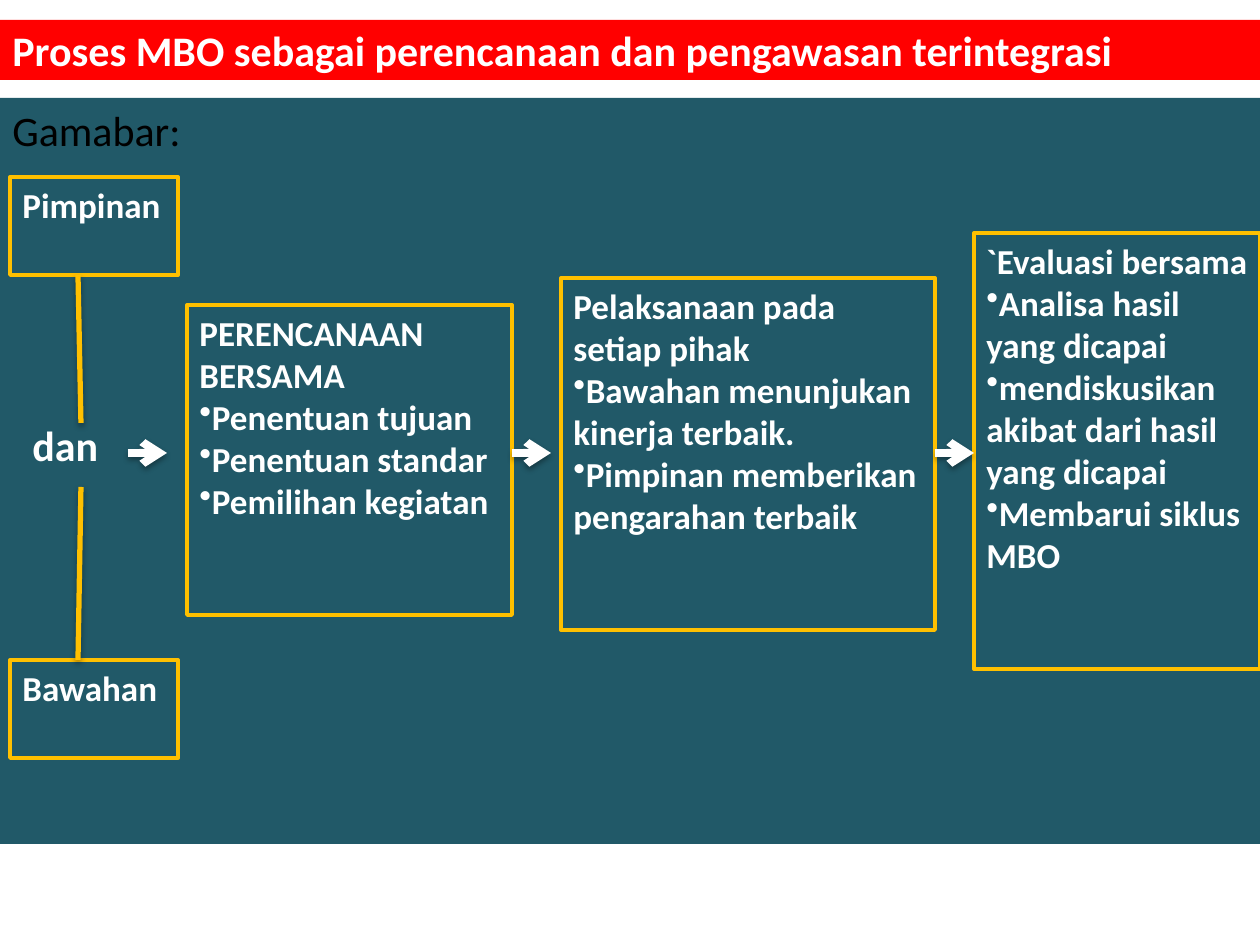
from lxml.etree import SubElement
from pptx import Presentation
from pptx.dml.color import RGBColor
from pptx.enum.shapes import MSO_CONNECTOR, MSO_SHAPE
from pptx.enum.text import MSO_ANCHOR, PP_ALIGN
from pptx.oxml.ns import qn
from pptx.util import Pt

PX = 914400 // 126
FONT = "Calibri"
COLORS = {
    "banner": "FF0000",
    "panel": "215968",
    "frame": "FFC000",
    "light": "FFFFFF",
    "dark": "000000",
}
ARROW_Y = 453
ARROW_LENGTH = 39


def rgb(name):
    return RGBColor.from_string(COLORS[name])


def px(*values):
    return [v * PX for v in values]


def add_bullet(p):
    SubElement(p._p.get_or_add_pPr(), qn("a:buChar"), char="•")


def write(s, lines, size, color="light", bold=True):
    tf = s.text_frame
    tf.text = "\n".join(lines)
    for i, p in enumerate(tf.paragraphs):
        p.alignment = PP_ALIGN.LEFT
        if i:
            add_bullet(p)
        for r in p.runs:
            r.font.name = FONT
            r.font.size = Pt(size)
            r.font.bold = bold
            r.font.color.rgb = rgb(color)
    return tf


def add_rect(slide, box):
    s = slide.shapes.add_shape(MSO_SHAPE.RECTANGLE, *px(*box))
    s.shadow.inherit = False
    s.text_frame.word_wrap = True
    s.text_frame.vertical_anchor = MSO_ANCHOR.TOP
    return s


def add_band(slide, box, fill):
    s = add_rect(slide, box)
    s.fill.solid()
    s.fill.fore_color.rgb = rgb(fill)
    s.line.fill.background()
    return s


def add_frame(slide, box, lines):
    s = add_rect(slide, box)
    s.fill.background()
    s.line.color.rgb = rgb("frame")
    s.line.width = Pt(2.25)
    write(s, lines, 20)


def add_label(slide, box, text):
    s = slide.shapes.add_textbox(*px(*box))
    s.text_frame.word_wrap = False
    write(s, [text], 24)


def add_shadow(s):
    effects = SubElement(s._element.spPr, qn("a:effectLst"))
    shadow = SubElement(effects, qn("a:outerShdw"), blurRad="40000",
                        dist="23000", dir="5400000", rotWithShape="0")
    color = SubElement(shadow, qn("a:srgbClr"), val=COLORS["dark"])
    SubElement(color, qn("a:alpha"), val="35000")


def add_line(slide, ends, color, width, arrow=False):
    s = slide.shapes.add_connector(MSO_CONNECTOR.STRAIGHT, *px(*ends))
    s.line.color.rgb = rgb(color)
    s.line.width = Pt(width)
    if arrow:
        SubElement(s.line._get_or_add_ln(), qn("a:tailEnd"), type="arrow")
    add_shadow(s)


def main():
    prs = Presentation()
    prs.slide_width, prs.slide_height = px(1260, 945)
    slide = prs.slides.add_slide(prs.slide_layouts[6])

    title = add_band(slide, (0, 20, 1260, 60), "banner")
    tf = write(title, ["Proses MBO sebagai perencanaan dan pengawasan terintegrasi"], 24)
    tf.vertical_anchor = MSO_ANCHOR.MIDDLE
    panel = add_band(slide, (0, 98, 1260, 746), "panel")
    write(panel, ["Gamabar:"], 24, "dark", False)

    for y, role in ((177, "Pimpinan"), (660, "Bawahan")):
        add_frame(slide, (10, y, 168, 98), [role])

    stages = (
        ((187, 305, 325, 310), [
            "PERENCANAAN BERSAMA",
            "Penentuan tujuan",
            "Penentuan standar",
            "Pemilihan kegiatan",
        ]),
        ((561, 278, 374, 352), [
            "Pelaksanaan pada setiap pihak",
            "Bawahan menunjukan kinerja terbaik.",
            "Pimpinan memberikan pengarahan terbaik",
        ]),
        ((974, 233, 286, 436), [
            "`Evaluasi bersama",
            "Analisa hasil yang dicapai",
            "mendiskusikan akibat dari hasil yang dicapai",
            "Membarui siklus MBO",
        ]),
    )
    for box, lines in stages:
        add_frame(slide, box, lines)

    for ends in ((78, 275, 81, 423), (81, 487, 78, 660)):
        add_line(slide, ends, "frame", 3)
    add_label(slide, (20, 413, 92, 63), "dan")
    for x in (128, 512, 935):
        add_line(slide, (x, ARROW_Y, x + ARROW_LENGTH, ARROW_Y), "light", 4.5, True)

    prs.save("out.pptx")


main()
